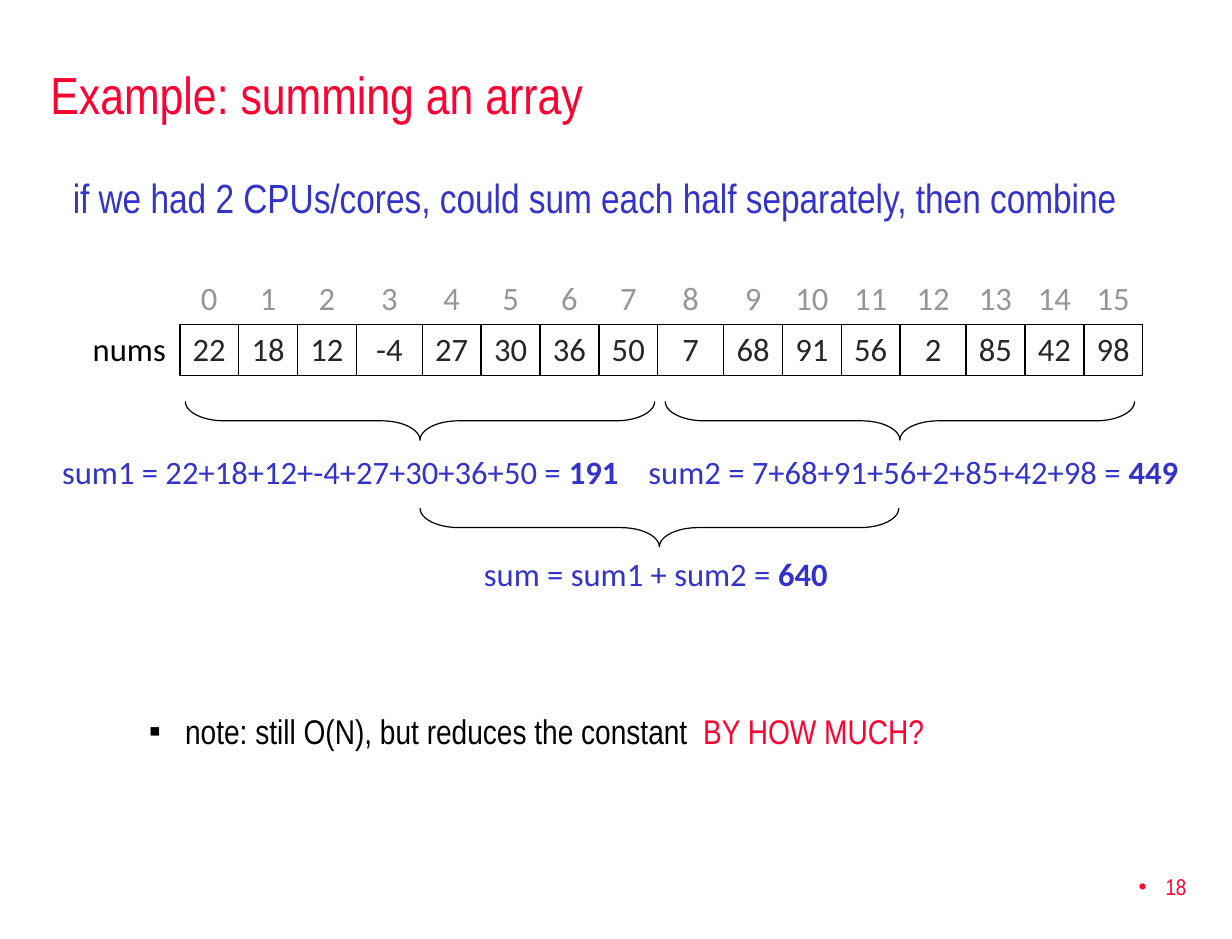
from pptx import Presentation
from pptx.dml.color import RGBColor
from pptx.enum.shapes import MSO_SHAPE
from pptx.enum.text import MSO_ANCHOR, MSO_AUTO_SIZE, PP_ALIGN
from pptx.oxml.ns import qn
from pptx.util import Inches, Pt
from lxml.etree import SubElement

NARROW, SANS = "Arial Narrow", "Calibri"
RED, BLUE, BLACK, GRAY, DARK = "FF0033", "3333CC", "000000", "969696", "262626"
NUMS = [22, 18, 12, -4, 27, 30, 36, 50, 7, 68, 91, 56, 2, 85, 42, 98]
WIDE_INDEXES = (3, 8, 12)


def rgb(color):
    return RGBColor.from_string(color)


def place(shape, left, top, width, height):
    shape.left, shape.top = Inches(left), Inches(top)
    shape.width, shape.height = Inches(width), Inches(height)


def add_run(p, text, size=20, font=SANS, color=BLUE, bold=False):
    r = p.add_run()
    r.text = text
    r.font.size, r.font.name, r.font.bold = Pt(size), font, bold
    r.font.color.rgb = rgb(color)


def set_bullet(p, char=None, margin=0.0, indent=0.0):
    pPr = p._p.get_or_add_pPr()
    pPr.set("marL", str(Inches(margin)))
    pPr.set("indent", str(Inches(indent)))
    if char:
        SubElement(pPr, qn("a:buFont"), typeface="Arial")
        SubElement(pPr, qn("a:buChar"), char=char)
    else:
        SubElement(pPr, qn("a:buNone"))


def fill_placeholder(sp, box, text, size, color, anchor, margin=0.0):
    place(sp, *box)
    tf = sp.text_frame
    tf.auto_size = MSO_AUTO_SIZE.NONE
    tf.vertical_anchor = anchor
    p = tf.paragraphs[0]
    p.alignment = PP_ALIGN.LEFT
    set_bullet(p, margin=margin, indent=-margin)
    add_run(p, text, size, NARROW, color)


def add_text(s, box, align=PP_ALIGN.LEFT, wrap=False, anchor=MSO_ANCHOR.TOP):
    tf = s.shapes.add_textbox(*map(Inches, box)).text_frame
    tf.word_wrap, tf.vertical_anchor = wrap, anchor
    p = tf.paragraphs[0]
    p.alignment = align
    return p


def add_sum(s, box, formula, total):
    p = add_text(s, box, PP_ALIGN.CENTER)
    add_run(p, formula)
    add_run(p, total, bold=True)


def add_brace(s, left, top, width, height=0.33):
    x, y = left + (width - height) / 2, top - (width - height) / 2
    sp = s.shapes.add_shape(MSO_SHAPE.LEFT_BRACE, *map(Inches, (x, y, height, width)))
    sp.rotation = 270
    sp.adjustments[0] = 1
    sp.shadow.inherit = False
    sp.fill.background()
    sp.line.color.rgb, sp.line.width = rgb(BLACK), Pt(0.75)


def set_borders(cell, sides):
    tcPr = cell._tc.get_or_add_tcPr()
    for side in "LRTB":
        ln = SubElement(tcPr, qn(f"a:ln{side}"), w=str(Pt(1)))
        if side in sides:
            SubElement(SubElement(ln, qn("a:solidFill")), qn("a:srgbClr"), val=BLACK)
        else:
            SubElement(ln, qn("a:noFill"))


def fill_cell(cell, text, color, sides):
    set_borders(cell, sides)
    cell.fill.background()
    p = cell.text_frame.paragraphs[0]
    p.alignment = PP_ALIGN.CENTER
    add_run(p, text, color=color)


def add_array(s, left, top, width, height):
    box = map(Inches, (left, top, width, height))
    table = s.shapes.add_table(2, len(NUMS) + 1, *box).table
    table.first_row = table.horz_banding = False
    widths = [0.86] + [0.56 if i in WIDE_INDEXES else 0.5 for i in range(len(NUMS))]
    for column, w in zip(table.columns, widths):
        column.width = Inches(w * width / sum(widths))
    fill_cell(table.cell(0, 0), "", BLACK, "")
    fill_cell(table.cell(1, 0), "nums", BLACK, "R")
    for i, num in enumerate(NUMS):
        fill_cell(table.cell(0, i + 1), str(i), GRAY, "B")
        fill_cell(table.cell(1, i + 1), str(num), DARK, "LRTB")


def main():
    prs = Presentation()
    prs.slide_width, prs.slide_height = Inches(10.5), Inches(8)
    s = prs.slides.add_slide(prs.slide_layouts[1])

    fill_placeholder(s.shapes.title, (0.33, 0.42, 9.92, 0.75),
                     "Example: summing an array", 32, RED, MSO_ANCHOR.MIDDLE)
    fill_placeholder(s.placeholders[1], (0.52, 1.42, 9.56, 3.92),
                     "if we had 2 CPUs/cores, could sum each half separately, then combine",
                     25, BLUE, MSO_ANCHOR.TOP, 0.38)

    p = add_text(s, (8.02, 7.29, 2.19, 0.53), PP_ALIGN.RIGHT, anchor=MSO_ANCHOR.MIDDLE)
    set_bullet(p, "•", 0.23, -0.23)
    add_run(p, "18", 14, NARROW, RED)

    add_array(s, 0.67, 2.33, 9.07, 0.87)

    for left, top, width in ((1.58, 3.42, 4), (5.67, 3.42, 4), (3.58, 4.33, 4.08)):
        add_brace(s, left, top, width)

    halves = ["+".join(map(str, half)) for half in (NUMS[:8], NUMS[8:])]
    add_sum(s, (0.41, 3.8, 4.98, 0.44), f"sum1 = {halves[0]} = ", str(sum(NUMS[:8])))
    add_sum(s, (5.41, 3.8, 4.75, 0.44), f"sum2 = {halves[1]} = ", str(sum(NUMS[8:])))
    add_sum(s, (4.01, 4.67, 3.16, 0.44), "sum = sum1 + sum2 = ", str(sum(NUMS)))

    p = add_text(s, (0.67, 6, 9.56, 1.25), wrap=True)
    set_bullet(p, "▪", 0.81, -0.31)
    add_run(p, "note: still O(N), but reduces the constant  ", 21, NARROW, BLACK)
    add_run(p, "BY HOW MUCH?", 21, NARROW, RED)

    prs.save("out.pptx")


if __name__ == "__main__":
    main()
